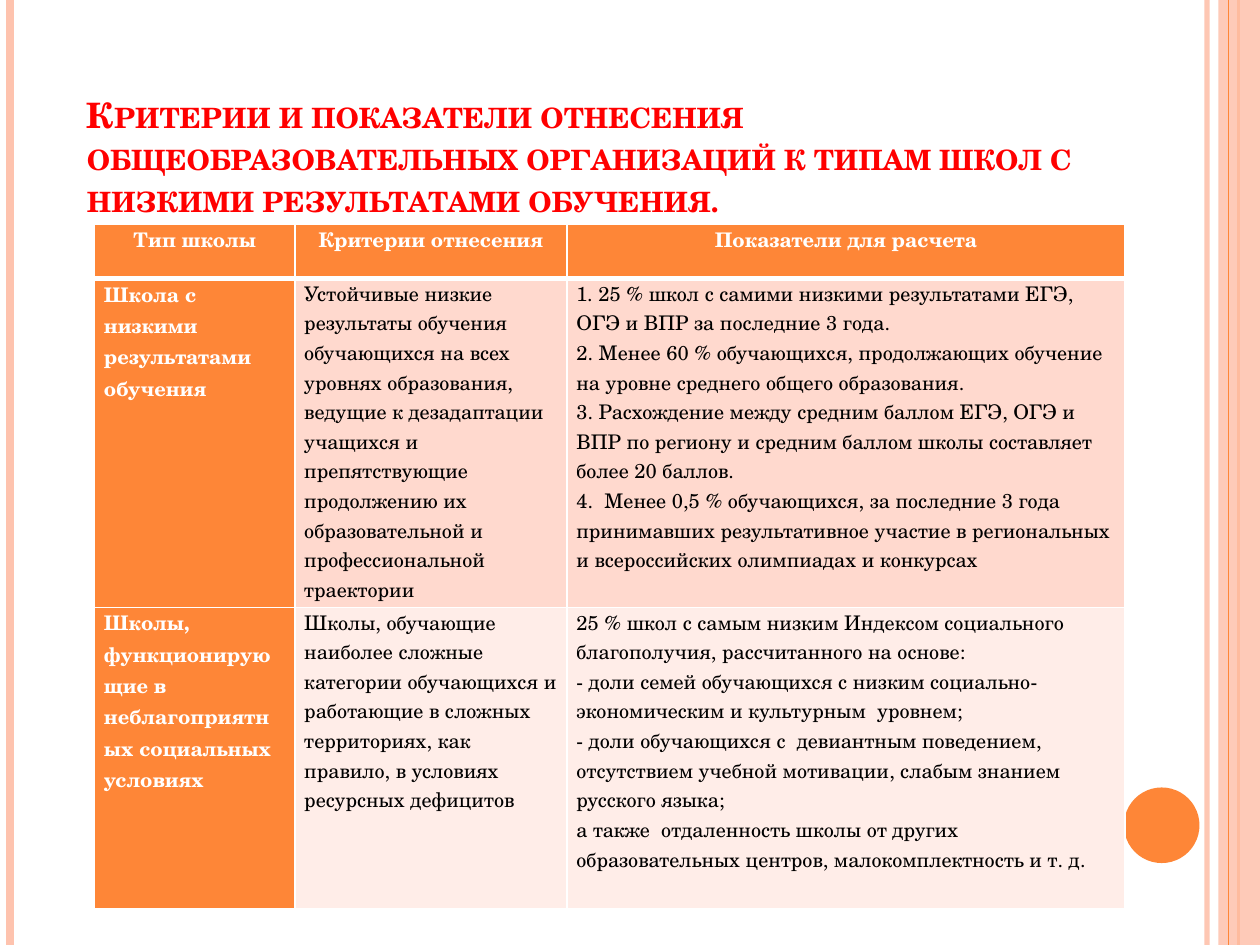
from lxml import etree
from pptx import Presentation
from pptx import util as u
from pptx.dml.color import RGBColor
from pptx.enum import shapes, text
from pptx.oxml.ns import qn

ORANGE = RGBColor(0xFE, 0x86, 0x37)
PEACH = RGBColor(0xFE, 0xC3, 0xAE)
ROSE = RGBColor(0xFF, 0xD9, 0xCE)
BLUSH = RGBColor(0xFF, 0xED, 0xE8)
RED = RGBColor(0xFF, 0, 0)
WHITE = RGBColor(0xFF, 0xFF, 0xFF)
BLACK = RGBColor(0, 0, 0)

TITLE = ("Критерии и показатели отнесения общеобразовательных организаций "
         "к типам школ с низкими результатами обучения.")
ROWS = [
    ["Тип школы", "Критерии отнесения", "Показатели для расчета"],
    ["Школа с низкими результатами обучения",
     "Устойчивые низкие результаты обучения обучающихся на всех уровнях "
     "образования, ведущие к дезадаптации учащихся и препятствующие "
     "продолжению их образовательной и профессиональной траектории",
     "1. 25 % школ с самими низкими результатами ЕГЭ, ОГЭ и ВПР за "
     "последние 3 года.\n"
     "2. Менее 60 % обучающихся, продолжающих обучение на уровне среднего "
     "общего образования.\n"
     "3. Расхождение между средним баллом ЕГЭ, ОГЭ и ВПР по региону и "
     "средним баллом школы составляет более 20 баллов.\n"
     "4.  Менее 0,5 % обучающихся, за последние 3 года принимавших "
     "результативное участие в региональных и всероссийских олимпиадах "
     "и конкурсах"],
    ["Школы, функционирующие в неблагоприятных социальных условиях",
     "Школы, обучающие наиболее сложные категории обучающихся и работающие "
     "в сложных территориях, как правило, в условиях ресурсных дефицитов",
     "25 % школ с самым низким Индексом социального благополучия, "
     "рассчитанного на основе:\n"
     "- доли семей обучающихся с низким социально-экономическим и "
     "культурным  уровнем;\n"
     "- доли обучающихся с  девиантным поведением, отсутствием учебной "
     "мотивации, слабым знанием русского языка;\n"
     "а также  отдаленность школы от других образовательных центров, "
     "малокомплектность и т. д."],
]


class Deck:
    font = "TeX Gyre Schola"
    size = 11.5
    inset = u.Pt(5.4)

    def __init__(self, slide):
        self.slide = slide

    def style(self, par, size, color, bold):
        for run in par.runs:
            run.font.name = self.font
            run.font.size = u.Pt(size)
            run.font.bold = bold
            run.font.color.rgb = color

    def fade(self, props, alpha):
        """Set the opacity of a solid colour, in percent."""
        tone = props.find(".//" + qn("a:srgbClr"))
        etree.SubElement(tone, qn("a:alpha")).set("val", str(alpha * 1000))

    def stripe(self, x, color, width, alpha=100):
        line = self.slide.shapes.add_connector(
            shapes.MSO_CONNECTOR.STRAIGHT,
            u.Inches(x), 0, u.Inches(x), u.Inches(7.5))
        line.line.color.rgb = color
        line.line.width = u.Pt(width)
        props = line._element.spPr
        etree.SubElement(props, qn("a:effectLst"))
        if alpha < 100:
            self.fade(props, alpha)

    def shape(self, kind, box, color, alpha=100):
        item = self.slide.shapes.add_shape(kind, *map(u.Inches, box))
        item.shadow.inherit = False
        item.fill.solid()
        item.fill.fore_color.rgb = color
        item.line.fill.background()
        if alpha < 100:
            self.fade(item._element.spPr, alpha)

    def title(self, words, box):
        item = self.slide.shapes.title
        item.left, item.top, item.width, item.height = map(u.Inches, box)
        frame = item.text_frame
        frame.text = words
        frame.auto_size = text.MSO_AUTO_SIZE.NONE
        frame.vertical_anchor = text.MSO_ANCHOR.BOTTOM
        par = frame.paragraphs[0]
        par.alignment = text.PP_ALIGN.LEFT
        self.style(par, 20, RED, True)
        par.runs[0].font._element.set("cap", "small")

    def rule(self, cell, color, width):
        """Draw the lower border of a cell."""
        line = etree.Element(qn("a:lnB"), w=str(u.Pt(width)))
        fill = etree.SubElement(line, qn("a:solidFill"))
        etree.SubElement(fill, qn("a:srgbClr"), val=str(color))
        cell._tc.get_or_add_tcPr().insert(0, line)

    def cell(self, cell, words, fill, head, side):
        cell.fill.solid()
        cell.fill.fore_color.rgb = fill
        cell.margin_left = cell.margin_right = self.inset
        cell.margin_top = cell.margin_bottom = 0
        cell.text_frame.text = words
        strong = head or side
        for par in cell.text_frame.paragraphs:
            par.alignment = (text.PP_ALIGN.CENTER if head
                             else text.PP_ALIGN.LEFT)
            self.style(par, self.size, WHITE if strong else BLACK, strong)
        if head:
            self.rule(cell, WHITE, 3)

    def table(self, rows, box, wides, highs, fills):
        grid = self.slide.shapes.add_table(
            len(rows), len(wides), *map(u.Inches, box)).table
        grid.first_col = True
        for col, wide in zip(grid.columns, wides):
            col.width = u.Inches(wide)
        for r, (row, high) in enumerate(zip(rows, highs)):
            grid.rows[r].height = u.Inches(high)
            for c, words in enumerate(row):
                fill = ORANGE if c == 0 else fills[r]
                self.cell(grid.cell(r, c), words, fill, r == 0, c == 0)


def main():
    prs = Presentation()
    prs.slide_width, prs.slide_height = u.Inches(10), u.Inches(7.5)
    deck = Deck(prs.slides.add_slide(prs.slide_layouts[5]))
    deck.stripe(9.58, PEACH, 3, 93)
    deck.stripe(0.08, PEACH, 4.5)
    deck.stripe(9.83, ORANGE, 1.5)
    deck.shape(shapes.MSO_SHAPE.RECTANGLE, (9.67, 0, 0.33, 7.5), PEACH, 87)
    deck.stripe(9.75, ORANGE, 0.75)
    deck.shape(shapes.MSO_SHAPE.OVAL, (8.92, 6.25, 0.6, 0.6), ORANGE)
    deck.title(TITLE, (0.59, 0.22, 8.17, 1.57))
    deck.table(ROWS, (0.75, 1.78, 8.19, 5.43), (1.59, 2.16, 4.43),
               (0.43, 2.61, 2.39), (ORANGE, ROSE, BLUSH))
    prs.save("out.pptx")


if __name__ == "__main__":
    main()
